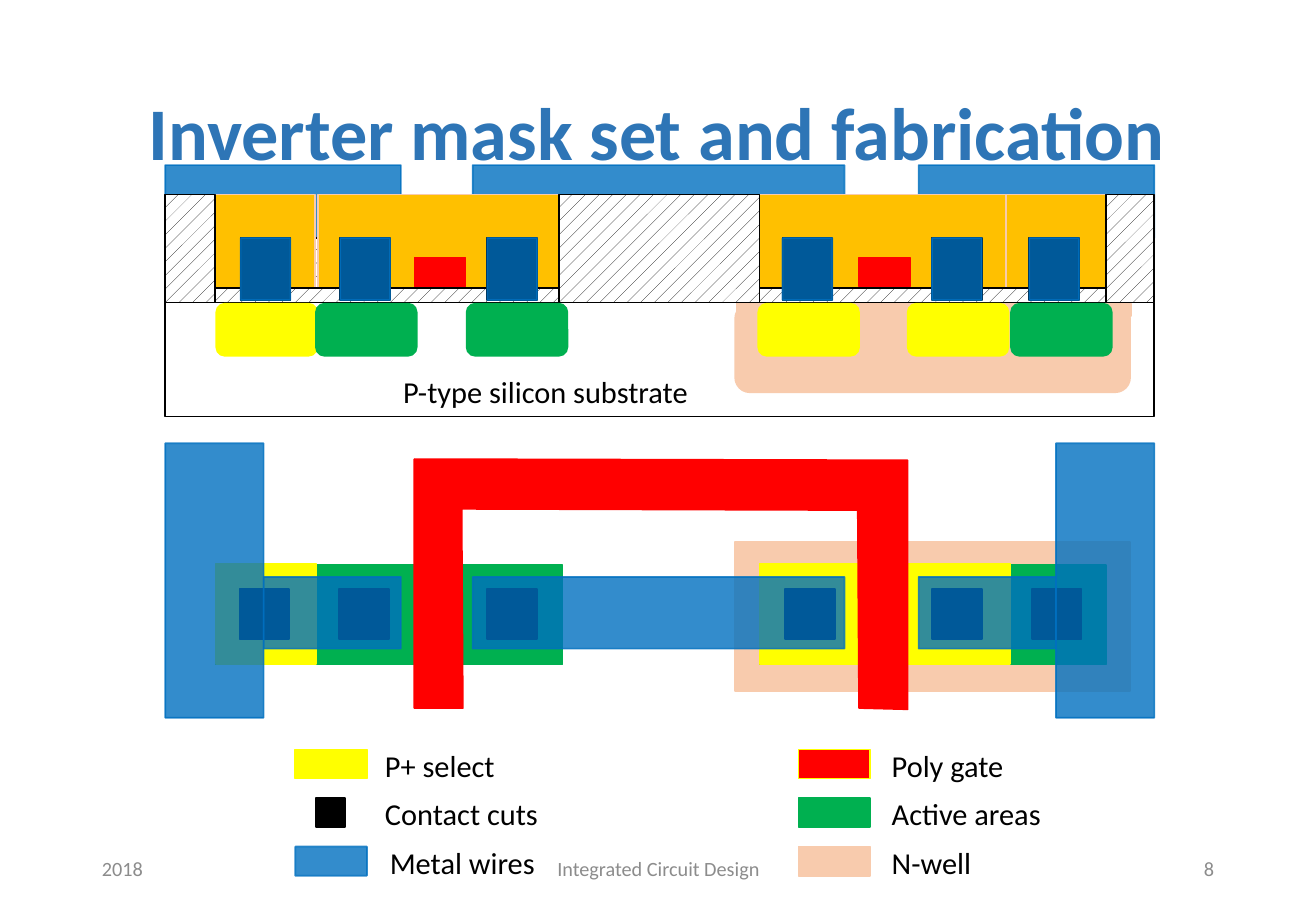
from lxml.etree import SubElement
from pptx import Presentation
from pptx.dml.color import RGBColor
from pptx.enum.dml import MSO_PATTERN
from pptx.enum.shapes import MSO_SHAPE
from pptx.enum.text import MSO_ANCHOR, PP_ALIGN
from pptx.oxml.ns import qn
from pptx.util import Inches, Pt

COLORS = {
    "well": "F8CBAD", "metal": "0070C0", "oxide": "FFC000",
    "active": "00B050", "select": "FFFF00", "gate": "FF0000",
    "cut": "000000", "ink": "000000", "paper": "FFFFFF",
    "title": "2E75B6", "foot": "8C8C8C",
}
RECT, ROUND = MSO_SHAPE.RECTANGLE, MSO_SHAPE.ROUNDED_RECTANGLE


def rgb(name):
    return RGBColor.from_string(COLORS[name])


def fade(fill):
    """Make a solid fill 80 % opaque."""
    for color in fill._xPr.iter(qn("a:srgbClr")):
        SubElement(color, qn("a:alpha"), val="80000")


def paint(shape, layer, edge=None, sheer=False):
    """Give a shape the look of its layer."""
    shape.shadow.inherit = False
    shape.line.width = Pt(1)
    shape.line.color.rgb = rgb(edge or layer)
    if sheer:
        fade(shape.line.fill)
    fill = shape.fill
    if layer == "ink":
        fill.background()
    elif layer == "hatch":
        fill.patterned()
        fill.pattern = MSO_PATTERN.PERCENT_10
        fill.fore_color.rgb = rgb("ink")
        fill.back_color.rgb = rgb("paper")
    else:
        fill.solid()
        fill.fore_color.rgb = rgb(layer)
        if layer == "metal":
            fade(fill)


def blocks(slide, box, layer, sizes, kind=RECT, edge=None, sheer=False):
    """Draw blocks of one layer, placed relative to the box."""
    for x, y, w, h in sizes:
        shape = slide.shapes.add_shape(
            kind, Inches(box[0] + x), Inches(box[1] + y), Inches(w), Inches(h))
        paint(shape, layer, edge, sheer)


def style(frame, size, color, align=PP_ALIGN.LEFT, bold=False):
    para = frame.paragraphs[0]
    para.alignment = align
    font = para.runs[0].font
    font.name, font.size, font.bold = "Calibri", Pt(size), bold
    font.color.rgb = rgb(color)


def label(slide, box, text, size=18, color="ink", align=PP_ALIGN.LEFT,
          anchor=MSO_ANCHOR.TOP):
    frame = slide.shapes.add_textbox(*map(Inches, box)).text_frame
    frame.word_wrap = True
    frame.vertical_anchor = anchor
    frame.text = text
    style(frame, size, color, align)


def heading(slide, box):
    title = slide.shapes.title
    title.left, title.top, title.width, title.height = map(Inches, box)
    frame = title.text_frame
    frame.text = "Inverter mask set and fabrication"
    frame.vertical_anchor = MSO_ANCHOR.MIDDLE
    frame.paragraphs[0].line_spacing = 0.9
    style(frame, 44, "title", PP_ALIGN.CENTER, True)


def section(slide, box):
    """Cross-section of the wafer."""
    # Metal and oxide above the surface
    blocks(slide, box, "well", [(4.7, 1.14, 3.25, 0.1)])
    blocks(slide, box, "metal", [(x, 0, w, 0.6) for x, w in
                                 ((0, 1.94), (2.53, 3.06), (6.2, 1.94))])
    blocks(slide, box, "hatch", [(0, 0.6, 8.14, 0.52)], edge="ink")
    blocks(slide, box, "oxide", [(x, 0.24, w, 0.79) for x, w in
           ((4.69, 2.23), (0.01, 1.22), (6.92, 0.89), (1.26, 2.1))],
           edge="well")
    # Substrate and well
    blocks(slide, box, "ink", [(0, 1.13, 8.14, 0.94)])
    label(slide, (box[0] + 1.86, box[1] + 1.66, 2.63, 0.4),
          "P-type silicon substrate")
    blocks(slide, box, "well", [(4.69, 1.14, 3.25, 0.73)], ROUND)
    # Thin and field oxide
    thin = [(x, 1.01, w, 0.12) for x, w in ((4.78, 3.03), (0.41, 2.95))]
    field = [(x, 0.24, w, 0.89) for x, w in
             ((7.74, 0.4), (3.24, 1.65), (0, 0.41))]
    blocks(slide, box, "hatch", thin + field, edge="ink")
    # Diffusions, gates and contacts
    for layer, spots in (("select", (0.42, 4.88, 6.11)),
                         ("active", (1.24, 2.48, 6.96))):
        blocks(slide, box, layer,
               [(x, 1.14, 0.83, 0.43) for x in spots], ROUND)
    blocks(slide, box, "gate", [(x, 0.76, 0.42, 0.24) for x in (2.05, 5.71)])
    plugs = [(x, 0.6, 0.41, 0.51)
             for x in (0.62, 1.44, 2.65, 5.08, 6.31, 7.11)]
    for layer in ("cut", "metal"):
        blocks(slide, box, layer, plugs)


def layout(slide, box):
    """Top view of the masks."""
    blocks(slide, box, "well", [(4.69, 0.81, 3.25, 1.23)])
    blocks(slide, box, "active", [(x, 1, 2.85, 0.82) for x in (4.89, 0.42)])
    blocks(slide, box, "select", [(0.42, 0.99, 0.82, 0.83),
                                  (4.89, 0.99, 2.06, 0.83)])
    # Shared gate
    bend = [(2.05, 2.18), (2.05, 0.13), (6.11, 0.14), (6.11, 2.19),
            (5.71, 2.18), (5.7, 0.55), (2.44, 0.54), (2.45, 2.18)]
    spots = [(Inches(box[0] + x), Inches(box[1] + y)) for x, y in bend]
    pen = slide.shapes.build_freeform(*spots[0])
    pen.add_line_segments(spots[1:])
    paint(pen.convert_to_shape(), "gate")
    # Contacts and wires
    blocks(slide, box, "cut", [(x, 1.2, 0.41, 0.41) for x in
                               (0.61, 1.43, 2.65, 5.1, 6.31, 7.13)])
    wires = [(x, 1.1, w, 0.59) for x, w in
             ((0.81, 1.13), (2.53, 3.06), (6.2, 1.13))]
    rails = [(x, 0, 0.81, 2.26) for x in (0, 7.33)]
    blocks(slide, box, "metal", wires + rails, sheer=True)


def legend(slide, box):
    keys = [
        (0, 0.64, [("select", "P+ select"), ("cut", "Contact cuts"),
                   ("metal", "Metal wires")]),
        (4.14, 4.81, [("gate", "Poly gate"), ("active", "Active areas"),
                      ("well", "N-well")]),
    ]
    for left, text, rows in keys:
        for row, (layer, name) in enumerate(rows):
            y = 0.4 * row
            key = (left, y + 0.07, 0.59, 0.24)
            if layer == "cut":
                key = (left + 0.17, y + 0.07, 0.24, 0.24)
            edge = "select" if layer == "gate" else None
            blocks(slide, box, layer, [key], edge=edge)
            shift = 0.04 if layer == "metal" else 0
            label(slide, (box[0] + text + shift, box[1] + y, 1.67, 0.4), name)


def footer(slide, box):
    left, top = box
    parts = [(0, 2.44, "2018", PP_ALIGN.LEFT),
             (2.85, 3.66, "Integrated Circuit Design", PP_ALIGN.CENTER),
             (6.91, 2.44, "8", PP_ALIGN.RIGHT)]
    for x, w, text, align in parts:
        label(slide, (left + x, top, w, 0.4), text, 12, "foot", align,
              MSO_ANCHOR.MIDDLE)


def main():
    deck = Presentation()
    deck.slide_width, deck.slide_height = Inches(10.83), Inches(7.5)
    slide = deck.slides.add_slide(deck.slide_layouts[5])
    heading(slide, (0.74, 0.4, 9.34, 1.45))
    section(slide, (1.36, 1.36))
    layout(slide, (1.36, 3.65))
    legend(slide, (2.43, 6.1))
    footer(slide, (0.74, 6.95))
    deck.save("out.pptx")


if __name__ == "__main__":
    main()
